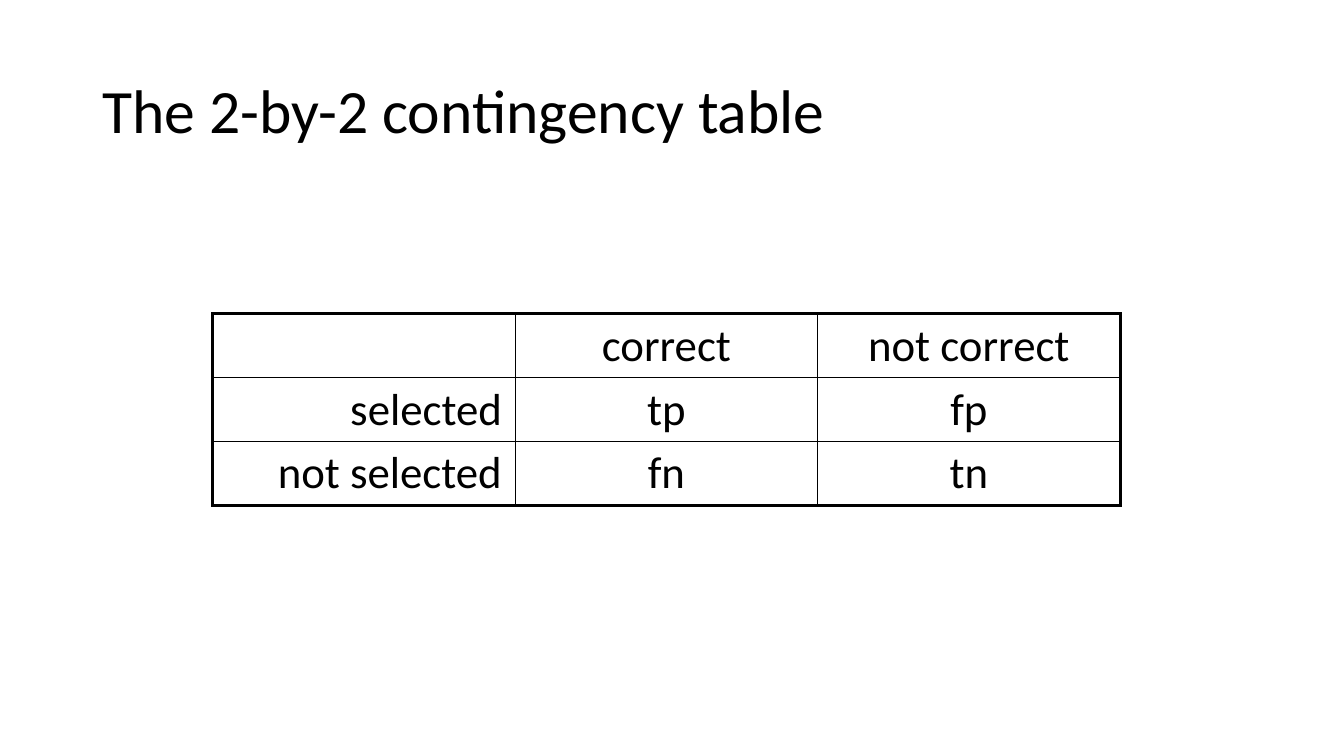
from lxml.etree import SubElement
from pptx import Presentation
from pptx.dml.color import RGBColor
from pptx.enum.text import MSO_ANCHOR, PP_ALIGN
from pptx.oxml.ns import qn
from pptx.util import Inches, Pt

BLACK = "000000"
THICK, THIN = 2.25, 1
ROWS = [
    ["", "correct", "not correct"],
    ["selected", "tp", "fp"],
    ["not selected", "fn", "tn"],
]


def color(code):
    return RGBColor.from_string(code)


def style(par, size, align):
    par.alignment = align
    font = par.font
    for item in [font] + [run.font for run in par.runs]:
        item.name = "Calibri"
        item.size = Pt(size)
        item.color.rgb = color(BLACK)


def add_title(slide, left, top, width, height):
    box = slide.shapes.add_textbox(
        Inches(left), Inches(top), Inches(width), Inches(height))
    frame = box.text_frame
    frame.word_wrap = True
    frame.vertical_anchor = MSO_ANCHOR.MIDDLE
    frame.text = "The 2-by-2 contingency table"
    par = frame.paragraphs[0]
    par.line_spacing = 0.9
    style(par, 44, PP_ALIGN.LEFT)


def add_border(cell, side, width):
    props = cell._tc.get_or_add_tcPr()
    line = SubElement(props, qn(f"a:ln{side}"), w=str(Pt(width)))
    fill = SubElement(line, qn("a:solidFill"))
    SubElement(fill, qn("a:srgbClr"), val=BLACK)


def add_grid(slide, left, top, width, height):
    """Add the table with a thick outer frame and thin inner lines."""
    count, span = len(ROWS), len(ROWS[0])
    table = slide.shapes.add_table(
        count, span, Inches(left), Inches(top),
        Inches(width), Inches(height)).table
    table.first_row = table.horz_banding = False
    for y, row in enumerate(ROWS):
        for x, text in enumerate(row):
            cell = table.cell(y, x)
            cell.text = text
            cell.margin_left = cell.margin_right = Inches(0.13)
            cell.margin_top = cell.margin_bottom = Inches(0.05)
            align = PP_ALIGN.CENTER if x else PP_ALIGN.RIGHT
            style(cell.text_frame.paragraphs[0], 32, align)
            edges = {"L": x == 0, "R": x == span - 1,
                     "T": y == 0, "B": y == count - 1}
            for side, outer in edges.items():
                add_border(cell, side, THICK if outer else THIN)
            cell.fill.background()


def main():
    deck = Presentation()
    deck.slide_width, deck.slide_height = Inches(13.33), Inches(7.5)
    slide = deck.slides.add_slide(deck.slide_layouts[6])
    add_title(slide, 0.92, 0.4, 11.5, 1.45)
    add_grid(slide, 2.11, 3.11, 9, 1.9)
    deck.save("out.pptx")


if __name__ == "__main__":
    main()
